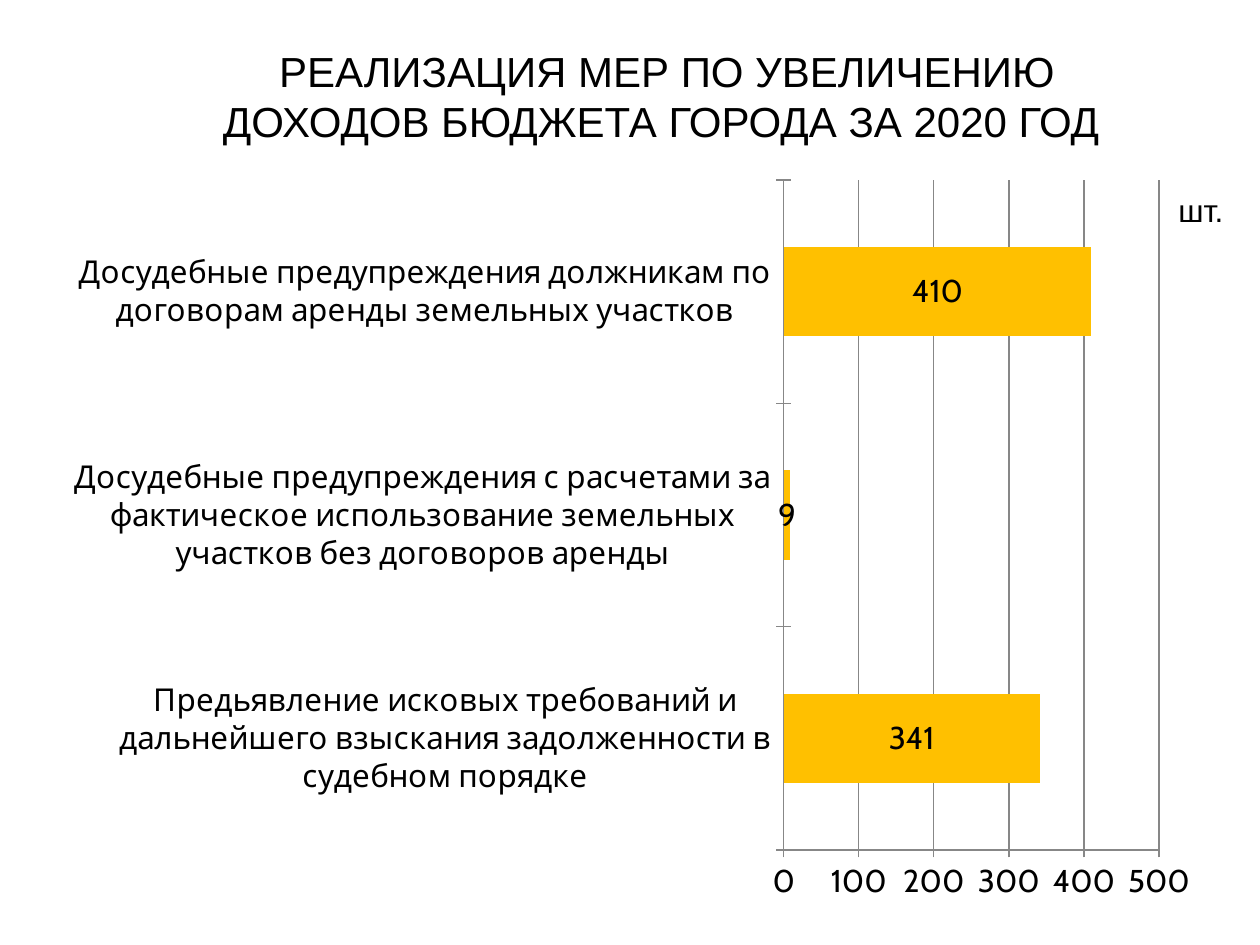
from lxml.etree import SubElement
from pptx import Presentation
from pptx.chart.data import CategoryChartData
from pptx.dml.color import RGBColor
from pptx.enum.chart import XL_CHART_TYPE, XL_LABEL_POSITION, XL_TICK_MARK
from pptx.enum.text import MSO_ANCHOR, PP_ALIGN
from pptx.oxml.ns import qn
from pptx.util import Pt

SCALE = 914400 // 126
BLACK, GREY, GOLD = "000000", "878787", "FFC000"
MEASURES = [
    ("Предьявление исковых требований и дальнейшего взыскания "
     "задолженности в судебном порядке", 341),
    ("Досудебные предупреждения с расчетами за фактическое использование "
     "земельных участков без договоров аренды", 9),
    ("Досудебные предупреждения должникам по договорам аренды "
     "земельных участков", 410),
]


def px(*sizes):
    return [size * SCALE for size in sizes]


def color(code):
    return RGBColor.from_string(code)


def style(font, face, size):
    font.name, font.size = face, Pt(size)
    font.bold = False
    font.color.rgb = color(BLACK)


def add_text(slide, box, text, size, align=PP_ALIGN.LEFT,
             anchor=MSO_ANCHOR.TOP, wrap=True):
    frame = slide.shapes.add_textbox(*px(*box)).text_frame
    frame.word_wrap = wrap
    frame.vertical_anchor = anchor
    frame.text = text
    para = frame.paragraphs[0]
    para.alignment = align
    style(para.runs[0].font, "Arial", size)


def place_plot(chart, **parts):
    """Fix the inner plot area, in fractions of the chart."""
    area = chart._chartSpace.chart.plotArea
    layout = area.find(qn("c:layout"))
    if layout is None:
        layout = SubElement(area, qn("c:layout"))
        area.insert(0, layout)
    manual = SubElement(layout, qn("c:manualLayout"))
    values = {"layoutTarget": "inner", "xMode": "edge", "yMode": "edge", **parts}
    for name, value in values.items():
        SubElement(manual, qn("c:" + name)).set("val", str(value))


def add_bars(slide, box):
    data = CategoryChartData()
    data.categories = [name for name, _ in MEASURES]
    data.add_series("Series 1", [count for _, count in MEASURES])
    chart = slide.shapes.add_chart(
        XL_CHART_TYPE.BAR_STACKED, *px(*box), data).chart
    chart.has_legend = chart.has_title = False
    style(chart.font, "Cabin", 18)

    for axis in (chart.category_axis, chart.value_axis):
        axis.major_tick_mark = XL_TICK_MARK.CROSS
        axis.minor_tick_mark = XL_TICK_MARK.NONE
        axis.format.line.color.rgb = color(GREY)
    scale = chart.value_axis
    scale.minimum_scale, scale.maximum_scale, scale.major_unit = 0, 500, 100
    scale.has_major_gridlines = True
    scale.major_gridlines.format.line.color.rgb = color(GREY)

    plot = chart.plots[0]
    plot.gap_width, plot.overlap = 150, 100
    plot.vary_by_categories = False
    bars = plot.series[0]
    bars.format.fill.solid()
    bars.format.fill.fore_color.rgb = color(GOLD)
    labels = bars.data_labels
    labels.show_value = True
    labels.position = XL_LABEL_POSITION.CENTER
    style(labels.font, "Cabin", 18)
    place_plot(chart, x=0.62, y=0.02, w=0.33, h=0.89)


def main():
    deck = Presentation()
    deck.slide_width, deck.slide_height = px(1260, 945)
    slide = deck.slides.add_slide(deck.slide_layouts[6])
    add_text(slide, (179, 26, 976, 139),
             "РЕАЛИЗАЦИЯ МЕР ПО УВЕЛИЧЕНИЮ ДОХОДОВ БЮДЖЕТА ГОРОДА ЗА 2020 ГОД ",
             24, PP_ALIGN.CENTER, MSO_ANCHOR.MIDDLE)
    add_bars(slide, (74, 165, 1142, 753))
    add_text(slide, (1166, 185, 71, 89), "шт.", 18, wrap=False)
    deck.save("out.pptx")


if __name__ == "__main__":
    main()
